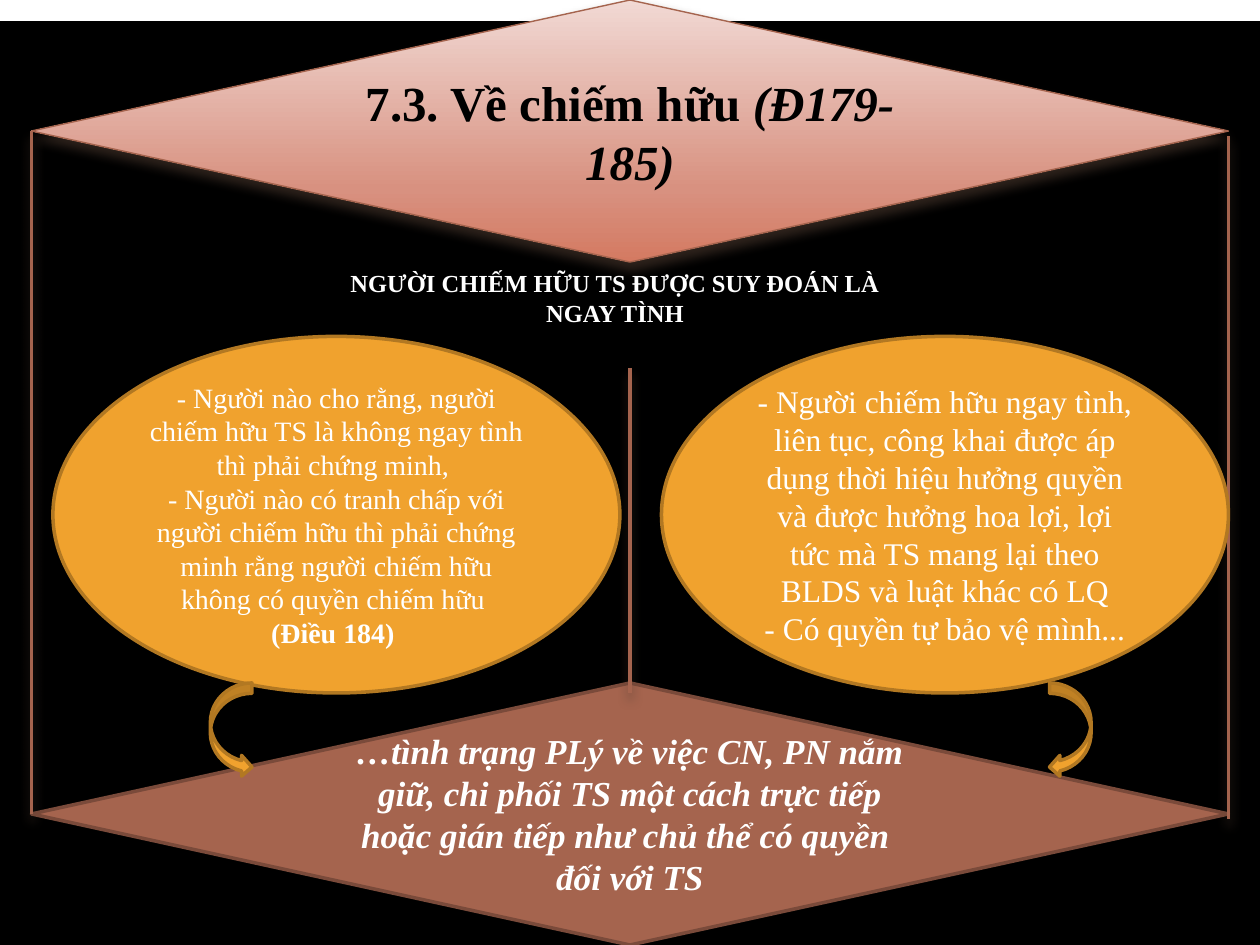
"""Build the slide on possession: two diamonds, two ovals and their links."""
from lxml.etree import SubElement
from pptx import Presentation
from pptx.dml.color import RGBColor
from pptx.enum.shapes import MSO_CONNECTOR, MSO_SHAPE as Shape
from pptx.enum.text import MSO_ANCHOR, MSO_AUTO_SIZE, PP_ALIGN
from pptx.oxml.ns import qn
from pptx.util import Inches, Pt

BLACK = RGBColor(0x00, 0x00, 0x00)
WHITE = RGBColor(0xFF, 0xFF, 0xFF)
BROWN = RGBColor(0xA5, 0x64, 0x4E)
DARK_BROWN = RGBColor(0x7A, 0x4A, 0x3A)
ORANGE = RGBColor(0xF0, 0xA2, 0x2E)
DARK_ORANGE = RGBColor(0xB2, 0x78, 0x22)
SHADOW = RGBColor(0x4E, 0x3B, 0x30)
TITLE_STOPS = [
    (0, RGBColor(0xF1, 0xD9, 0xD4)),
    (72, RGBColor(0xD8, 0x91, 0x80)),
    (100, RGBColor(0xD4, 0x7A, 0x62)),
]
FONT = "Times New Roman"

TITLE = [[("7.3. Về chiếm hữu ", "b"), ("(Đ179-185)", "bi")]]
HEADING = [[("NGƯỜI CHIẾM HỮU TS ĐƯỢC SUY ĐOÁN LÀ NGAY TÌNH", "b")]]
DEFINITION = [
    [("…tình trạng PLý về việc CN, PN nắm giữ, chi phối TS một cách trực tiếp "
      "hoặc gián tiếp như chủ thể có quyền ", "bi")],
    [("đối với TS", "bi")],
]
PROOF = [
    [("- Người nào cho rằng, người chiếm hữu TS là không ngay tình "
      "thì phải chứng minh, ", "")],
    [("- Người nào có tranh chấp với người chiếm hữu thì phải chứng minh "
      "rằng người chiếm hữu không có quyền chiếm hữu ", "")],
    [("(Điều 184) ", "b")],
]
RIGHTS = [
    [("- Người chiếm hữu ngay tình, liên tục, công khai được áp dụng thời hiệu "
      "hưởng quyền và được hưởng hoa lợi, lợi tức mà TS mang lại theo BLDS "
      "và luật khác có LQ", "")],
    [("- Có quyền tự bảo vệ mình...", "")],
]
DIAMOND_SIZE = (9.5, 2.08)
OVAL_SIZE = (4.5, 2.83)
ARROW_SIZE = (0.33, 0.75)
LINKS = [(0.25, 1.04, 6.46), (5, 2.92, 5.5), (9.75, 1.08, 6.5)]
OVALS = [(0.42, PROOF, 16), (5.25, RIGHTS, 18)]
ARROWS = [(1.67, Shape.CURVED_RIGHT_ARROW), (8.33, Shape.CURVED_LEFT_ARROW)]


def add_color(parent, color):
    return SubElement(parent, qn("a:srgbClr"), val=str(color))


def add_shadow(effects):
    shadow = SubElement(effects, qn("a:outerShdw"), blurRad=str(Pt(6)),
                        dist=str(Pt(4)), dir="5400000", rotWithShape="0")
    SubElement(add_color(shadow, SHADOW), qn("a:alpha"), val="60000")


def add_text(shape, paragraphs, size, color):
    frame = shape.text_frame
    frame.word_wrap = True
    for index, runs in enumerate(paragraphs):
        paragraph = frame.add_paragraph() if index else frame.paragraphs[0]
        paragraph.alignment = PP_ALIGN.CENTER
        for text, style in runs:
            run = paragraph.add_run()
            run.text = text
            run.font.name = FONT
            run.font.size = Pt(size)
            run.font.color.rgb = color
            run.font.bold = "b" in style
            run.font.italic = "i" in style


def add_figure(slide, kind, left, top, size, fill, line, width=2):
    shape = slide.shapes.add_shape(
        kind, Inches(left), Inches(top), *map(Inches, size))
    shape.shadow.inherit = False
    shape.fill.solid()
    shape.fill.fore_color.rgb = fill
    shape.line.color.rgb = line
    shape.line.width = Pt(width)
    shape.text_frame.vertical_anchor = MSO_ANCHOR.MIDDLE
    return shape


def add_title(slide):
    diamond = add_figure(slide, Shape.FLOWCHART_DECISION, 0.25, 0,
                         DIAMOND_SIZE, BROWN, BROWN, 0.79)
    diamond.fill.gradient()
    diamond.fill.gradient_angle = 270
    properties = diamond.element.spPr
    stops = properties.find(".//" + qn("a:gsLst"))
    for stop in list(stops):
        stops.remove(stop)
    for position, color in TITLE_STOPS:
        add_color(SubElement(stops, qn("a:gs"), pos=str(position * 1000)), color)
    add_shadow(properties.find(qn("a:effectLst")))
    add_text(diamond, TITLE, 28, BLACK)


def add_link(slide, x, top, bottom):
    link = slide.shapes.add_connector(
        MSO_CONNECTOR.STRAIGHT, *map(Inches, (x, top, x, bottom)))
    link.line.color.rgb = BROWN
    link.line.width = Pt(2)
    add_shadow(SubElement(link.element.spPr, qn("a:effectLst")))


def add_heading(slide):
    box = slide.shapes.add_textbox(*map(Inches, (2.67, 2.08, 4.42, 0.57)))
    add_text(box, HEADING, 14, WHITE)
    box.text_frame.auto_size = MSO_AUTO_SIZE.SHAPE_TO_FIT_TEXT


def main():
    presentation = Presentation()
    presentation.slide_width = Inches(10)
    presentation.slide_height = Inches(7.5)
    slide = presentation.slides.add_slide(presentation.slide_layouts[6])

    add_figure(slide, Shape.RECTANGLE, 0, 0.17, (10, 7.5), BLACK, BLACK, 0.75)
    add_title(slide)
    definition = add_figure(slide, Shape.FLOWCHART_DECISION, 0.25, 5.42,
                            DIAMOND_SIZE, BROWN, DARK_BROWN)
    add_text(definition, DEFINITION, 20, WHITE)
    for link in LINKS:
        add_link(slide, *link)
    add_heading(slide)
    for left, paragraphs, size in OVALS:
        oval = add_figure(slide, Shape.OVAL, left, 2.67, OVAL_SIZE,
                          ORANGE, DARK_ORANGE)
        add_text(oval, paragraphs, size, WHITE)
    for left, kind in ARROWS:
        add_figure(slide, kind, left, 5.42, ARROW_SIZE, ORANGE, DARK_ORANGE)
    presentation.save("out.pptx")


if __name__ == "__main__":
    main()
